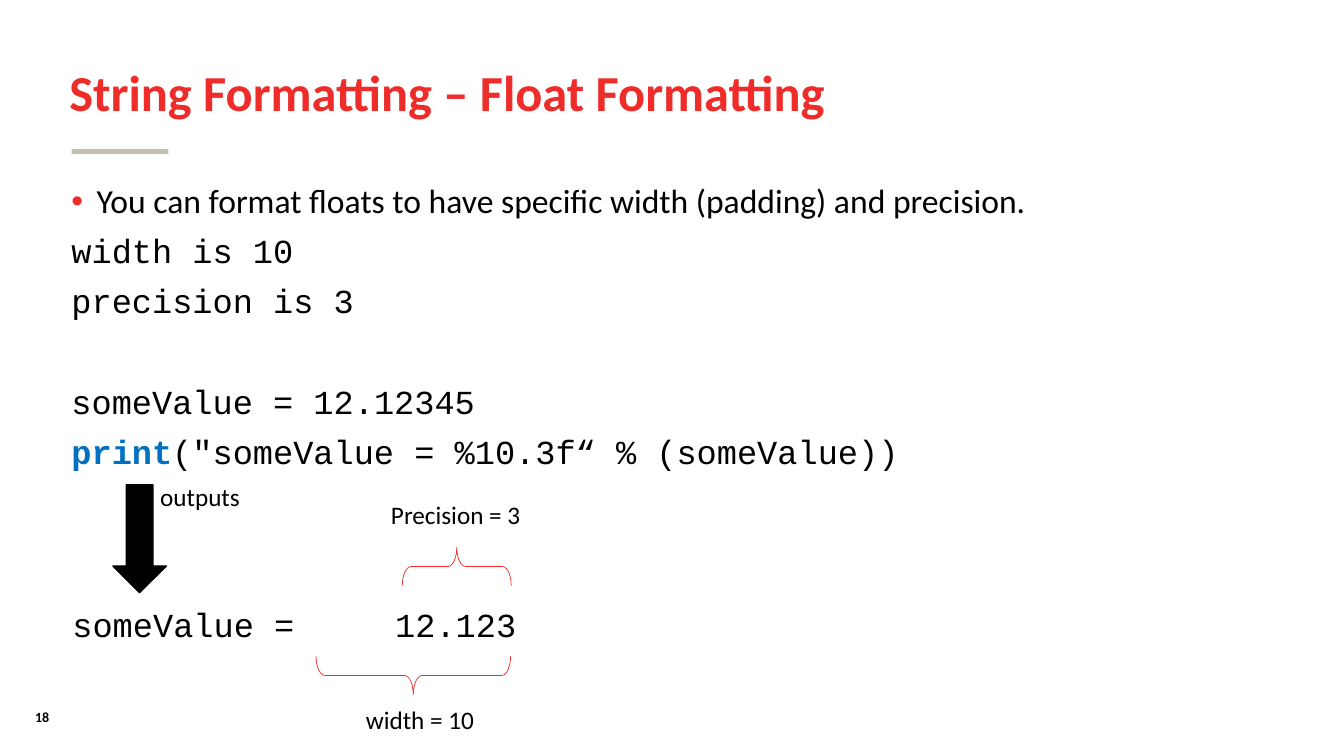
from dataclasses import dataclass

from lxml.etree import SubElement
from pptx import Presentation
from pptx.dml.color import RGBColor
from pptx.enum.shapes import MSO_SHAPE as Preset
from pptx.enum.text import MSO_ANCHOR as Anchor
from pptx.oxml.ns import qn
from pptx.util import Inches, Pt


@dataclass(frozen=True)
class Theme:
    red: RGBColor = RGBColor.from_string("EE2C2A")
    black: RGBColor = RGBColor.from_string("000000")
    blue: RGBColor = RGBColor.from_string("0070C0")
    rule: RGBColor = RGBColor.from_string("C3BFB6")
    sans: str = "Calibri"
    mono: str = "Courier New"
    title: Pt = Pt(36)
    body: Pt = Pt(24)
    label: Pt = Pt(18)
    number: Pt = Pt(10)


THEME = Theme()
TITLE = dict(name=THEME.sans, size=THEME.title, bold=True, color=THEME.red)
BODY = dict(name=THEME.sans, size=THEME.body, bold=False, color=THEME.black)
CODE = BODY | dict(name=THEME.mono)
KEYWORD = CODE | dict(bold=True, color=THEME.blue)
LABEL = BODY | dict(size=THEME.label)
NUMBER = BODY | dict(size=THEME.number, bold=True)


def set_attributes(target, values):
    for name, value in values.items():
        setattr(target, name, value)


def add_span(para, text, style):
    span = para.add_run()
    span.text = text
    set_attributes(span.font, {k: v for k, v in style.items() if k != "color"})
    span.font.color.rgb = style["color"]


def add_box(page, box, wrap=True, anchor=Anchor.TOP):
    frame = page.shapes.add_textbox(*map(Inches, box)).text_frame
    set_attributes(frame, dict(word_wrap=wrap, vertical_anchor=anchor))
    return frame


def add_line(page, box, text, style, wrap=True, anchor=Anchor.TOP, spacing=1.0):
    para = add_box(page, box, wrap, anchor).paragraphs[0]
    para.line_spacing = spacing
    add_span(para, text, style)


def add_figure(page, preset, box, fill=None, line=None, width=1, rotation=0):
    figure = page.shapes.add_shape(preset, *map(Inches, box))
    figure.shadow.inherit = False
    figure.rotation = rotation
    if fill is None:
        figure.fill.background()
    else:
        figure.fill.solid()
        figure.fill.fore_color.rgb = fill
    if line is None:
        figure.line.fill.background()
    else:
        figure.line.color.rgb = line
        figure.line.width = Pt(width)
    return figure


def add_bullet(para):
    props = para._p.get_or_add_pPr()
    props.set("marL", str(Inches(0.25)))
    props.set("indent", str(-Inches(0.25)))
    color = SubElement(props, qn("a:buClr"))
    SubElement(color, qn("a:srgbClr")).set("val", str(THEME.red))
    SubElement(props, qn("a:buFont")).set("typeface", "Arial")
    SubElement(props, qn("a:buChar")).set("char", "•")


def add_header(page, box):
    left, top, width, height = box
    add_line(page, box, "String Formatting – Float Formatting", TITLE,
             anchor=Anchor.MIDDLE, spacing=0.9)
    add_figure(page, Preset.RECTANGLE, (left + 0.12, top + height, 0.96, 0.05),
               fill=THEME.rule)


def add_example(page, box):
    lines = [
        (0, [("You can format floats to have specific width (padding) and precision.", BODY)]),
        (10, [("width is 10", CODE)]),
        (10, [("precision is 3", CODE)]),
        (46, [("someValue = 12.12345", CODE)]),
        (10, [("print", KEYWORD), ('("someValue = %10.3f“ % (someValue))', CODE)]),
    ]
    frame = add_box(page, box)
    for index, (before, spans) in enumerate(lines):
        para = frame.add_paragraph() if index else frame.paragraphs[0]
        set_attributes(para, dict(line_spacing=0.9, space_before=Pt(before)))
        if index == 0:
            add_bullet(para)
        for text, style in spans:
            add_span(para, text, style)


def add_brace(page, center, middle, span, rotation):
    depth = 0.38
    box = (center - depth / 2, middle - span / 2, depth, span)
    brace = add_figure(page, Preset.LEFT_BRACE, box, line=THEME.red,
                       width=0.5, rotation=rotation)
    brace.adjustments[0] = 0.23


def add_output(page, box):
    left, top, width, height = box
    add_figure(page, Preset.DOWN_ARROW, (left + 0.5, top + 0.08, 0.53, 1.07),
               fill=THEME.black, line=THEME.black)
    add_line(page, (left, top + 1.21, width, 0.5), "someValue =     12.123", CODE)
    add_brace(page, left + 3.48, top + 1.97, 1.93, 270)
    add_brace(page, left + 3.91, top + 0.89, 1.08, 90)
    labels = [
        ("outputs", 0.87, 0, 1),
        ("Precision = 3", 3.16, 0.17, 1.5),
        ("width = 10", 2.91, 2.21, 1.33),
    ]
    for text, across, down, wide in labels:
        add_line(page, (left + across, top + down, wide, 0.4), text, LABEL, wrap=False)


def add_number(page, box):
    add_line(page, box, "18", NUMBER)


def main():
    deck = Presentation()
    set_attributes(deck, dict(slide_width=Inches(13.33), slide_height=Inches(7.5)))
    page = deck.slides.add_slide(deck.slide_layouts[6])
    add_number(page, (0.25, 6.98, 1.14, 0.27))
    add_header(page, (0.59, 0.4, 11.24, 1.08))
    add_example(page, (0.61, 1.78, 11.22, 4.76))
    add_output(page, (0.62, 4.73, 7.63, 2.61))
    deck.save("out.pptx")


if __name__ == "__main__":
    main()
